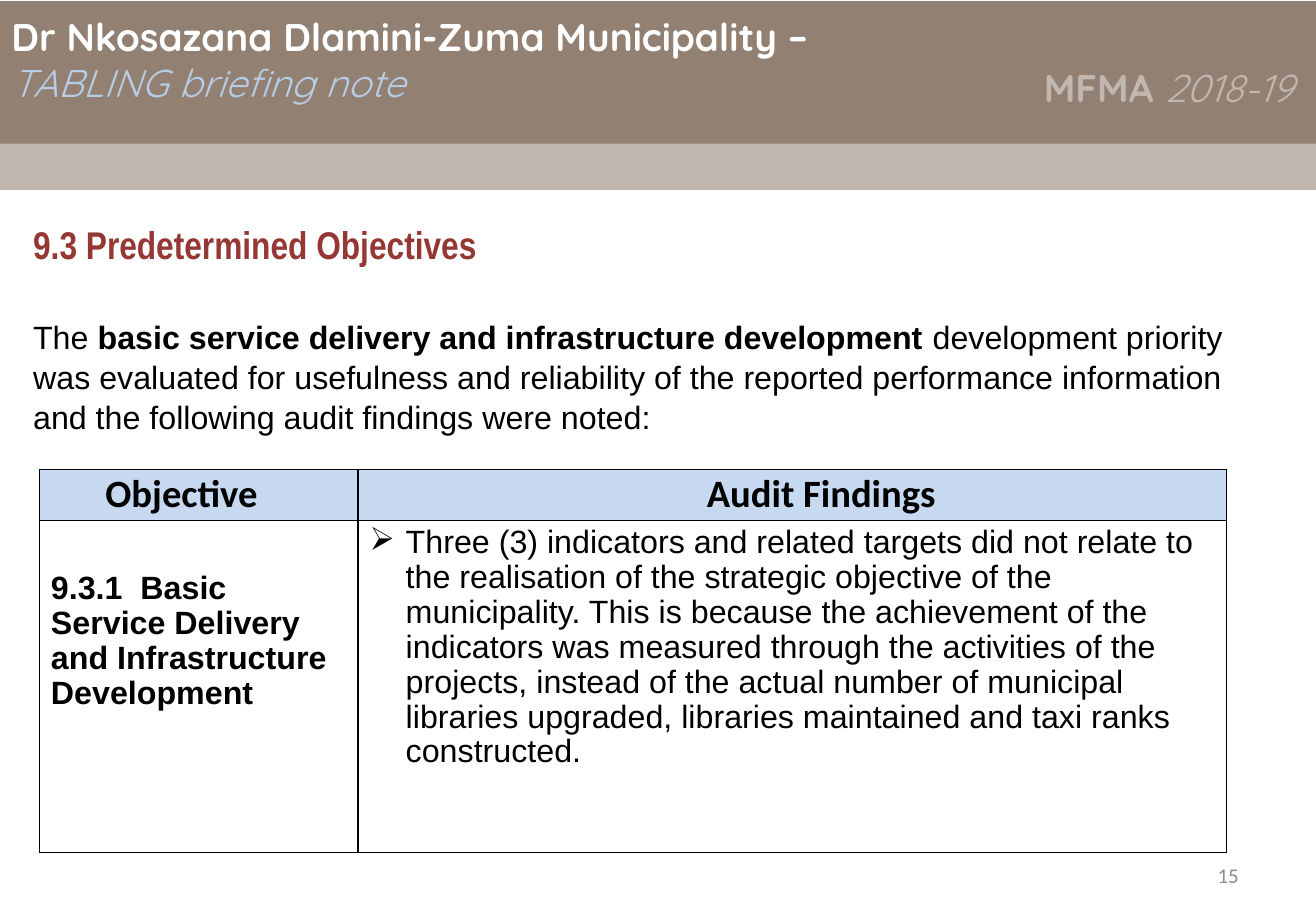
from dataclasses import dataclass
from typing import Optional

from lxml.etree import SubElement
from pptx import Presentation
from pptx.dml.color import RGBColor
from pptx.enum.shapes import MSO_SHAPE
from pptx.enum.text import MSO_ANCHOR, PP_ALIGN
from pptx.oxml import parse_xml
from pptx.oxml.ns import nsdecls, qn
from pptx.util import Pt


@dataclass(frozen=True)
class Theme:
    brown: str = "928073"
    sand: str = "C1B7AF"
    sky: str = "B8CCE4"
    header_blue: str = "C6D9F1"
    red: str = "953735"
    gray: str = "8C8C8C"
    black: str = "000000"
    white: str = "FFFFFF"
    display: str = "Quicksand"
    narrow: str = "Arial Narrow"
    text: str = "Arial"
    table: str = "Calibri"
    title_size: float = 24
    text_size: float = 20
    number_size: float = 13


T = Theme()


@dataclass(frozen=True)
class Run:
    text: str
    font: str = T.text
    size: float = T.text_size
    color: str = T.black
    bold: bool = False
    italic: bool = False


@dataclass(frozen=True)
class Para:
    runs: tuple[Run, ...]
    align: PP_ALIGN = PP_ALIGN.LEFT
    spacing: Optional[float] = None
    before: float = 0
    after: float = 0
    bullet: str = ""


@dataclass(frozen=True)
class Box:
    left: float
    top: float
    width: float
    height: float
    paras: tuple[Para, ...]
    anchor: MSO_ANCHOR = MSO_ANCHOR.TOP


@dataclass(frozen=True)
class Band:
    top: float
    height: float
    color: str


@dataclass(frozen=True)
class Cell:
    para: Para
    fill: str = ""
    anchor: MSO_ANCHOR = MSO_ANCHOR.TOP
    left: float = 7.2
    top: float = 3.6
    right: float = 7.2
    bottom: float = 3.6


def rgb(color: str) -> RGBColor:
    return RGBColor.from_string(color)


def write(tf, paras: tuple[Para, ...]) -> None:
    tf.word_wrap = True
    for i, para in enumerate(paras):
        p = tf.paragraphs[0] if i == 0 else tf.add_paragraph()
        p.alignment = para.align
        p.space_before, p.space_after = Pt(para.before), Pt(para.after)
        if para.spacing:
            p.line_spacing = para.spacing
        if para.bullet:
            pPr = p._p.get_or_add_pPr()
            pPr.set("marL", str(Pt(22.5)))
            pPr.set("indent", str(-Pt(22.5)))
            SubElement(pPr, qn("a:buChar")).set("char", para.bullet)
        for run in para.runs:
            r = p.add_run()
            r.text = run.text
            r.font.name, r.font.size = run.font, Pt(run.size)
            r.font.bold, r.font.italic = run.bold, run.italic
            r.font.color.rgb = rgb(run.color)


def add_band(s, band: Band, width: int) -> None:
    sp = s.shapes.add_shape(MSO_SHAPE.RECTANGLE, 0, Pt(band.top), width, Pt(band.height))
    sp.shadow.inherit = False
    sp.fill.solid()
    sp.fill.fore_color.rgb = rgb(band.color)
    sp.line.fill.background()


def add_box(s, box: Box) -> None:
    sp = s.shapes.add_textbox(Pt(box.left), Pt(box.top), Pt(box.width), Pt(box.height))
    sp.text_frame.vertical_anchor = box.anchor
    write(sp.text_frame, box.paras)


def add_borders(cell) -> None:
    tcPr = cell._tc.get_or_add_tcPr()
    for i, side in enumerate(("lnL", "lnR", "lnT", "lnB")):
        tcPr.insert(i, parse_xml(
            f'<a:{side} {nsdecls("a")} w="{Pt(1)}"><a:solidFill>'
            f'<a:srgbClr val="{T.black}"/></a:solidFill></a:{side}>'))


def add_findings(s, left: float, top: float, widths: tuple[float, ...],
                 heights: tuple[float, ...], rows: tuple[tuple[Cell, ...], ...]) -> None:
    table = s.shapes.add_table(len(heights), len(widths), Pt(left), Pt(top),
                               Pt(sum(widths)), Pt(sum(heights))).table
    table.horz_banding = table.first_row = False
    for column, width in zip(table.columns, widths):
        column.width = Pt(width)
    for i, row in enumerate(rows):
        table.rows[i].height = Pt(heights[i])
        for j, item in enumerate(row):
            cell = table.cell(i, j)
            cell.margin_left, cell.margin_right = Pt(item.left), Pt(item.right)
            cell.margin_top, cell.margin_bottom = Pt(item.top), Pt(item.bottom)
            cell.vertical_anchor = item.anchor
            if item.fill:
                cell.fill.solid()
                cell.fill.fore_color.rgb = rgb(item.fill)
            else:
                cell.fill.background()
            add_borders(cell)
            write(cell.text_frame, (item.para,))


def header_cell(text: str, align: PP_ALIGN) -> Cell:
    run = Run(text, T.table, T.title_size, bold=True)
    return Cell(Para((run,), align), T.header_blue, MSO_ANCHOR.MIDDLE, 41, 0, 5, 0)


BANDS = (Band(0.7, 90, T.brown), Band(89.3, 28.8, T.sand))

BOXES = (
    # Header title
    Box(0, 4.5, 622, 72, (
        Para((Run("Dr Nkosazana Dlamini-Zuma Municipality –", T.display, T.title_size, T.white, True),)),
        Para((Run("TABLING briefing note", T.display, T.title_size, T.sky, italic=True),)))),
    # Financial year
    Box(628.6, 31.7, 182.2, 52.6, (
        Para((Run("MFMA ", T.display, T.title_size, T.sand, True),
              Run("2018-19", T.display, T.title_size, T.sand, italic=True)),
             PP_ALIGN.RIGHT, 1.15, 6, 12),)),
    # Section heading and introduction
    Box(13.5, 134, 763, 150, (
        Para((Run("9.3 Predetermined Objectives", T.narrow, T.title_size, T.red, True),), before=3),
        Para((Run("The "),
              Run("basic service delivery and infrastructure development ", bold=True),
              Run("development priority was evaluated for usefulness and reliability of the "
                  "reported performance information and the following audit findings were noted:")),
             spacing=1.04, before=30))),
    # Page number
    Box(586, 529, 191, 30, (
        Para((Run("15", T.table, T.number_size, T.gray),), PP_ALIGN.RIGHT),), MSO_ANCHOR.MIDDLE),
)

FINDINGS = (
    (header_cell("Objective", PP_ALIGN.LEFT), header_cell("Audit Findings", PP_ALIGN.CENTER)),
    (Cell(Para((Run("9.3.1  Basic Service Delivery and Infrastructure Development", bold=True),),
               spacing=0.97, after=6), top=32),
     Cell(Para((Run("Three (3) indicators and related targets did not relate to the realisation of "
                    "the strategic objective of the municipality. This is because the achievement of "
                    "the indicators was measured through the activities of the projects, instead of "
                    "the actual number of municipal libraries upgraded, libraries maintained and taxi "
                    "ranks constructed."),), spacing=0.97, after=12, bullet="➢"))),
)


def main() -> None:
    prs = Presentation()
    prs.slide_width, prs.slide_height = Pt(818), Pt(571)
    s = prs.slides.add_slide(prs.slide_layouts[6])
    # Header bands
    for band in BANDS:
        add_band(s, band, prs.slide_width)
    # Text
    for box in BOXES:
        add_box(s, box)
    # Audit findings table
    add_findings(s, 24.5, 291.6, (198, 540), (31.7, 206.6), FINDINGS)
    prs.save("out.pptx")


if __name__ == "__main__":
    main()
